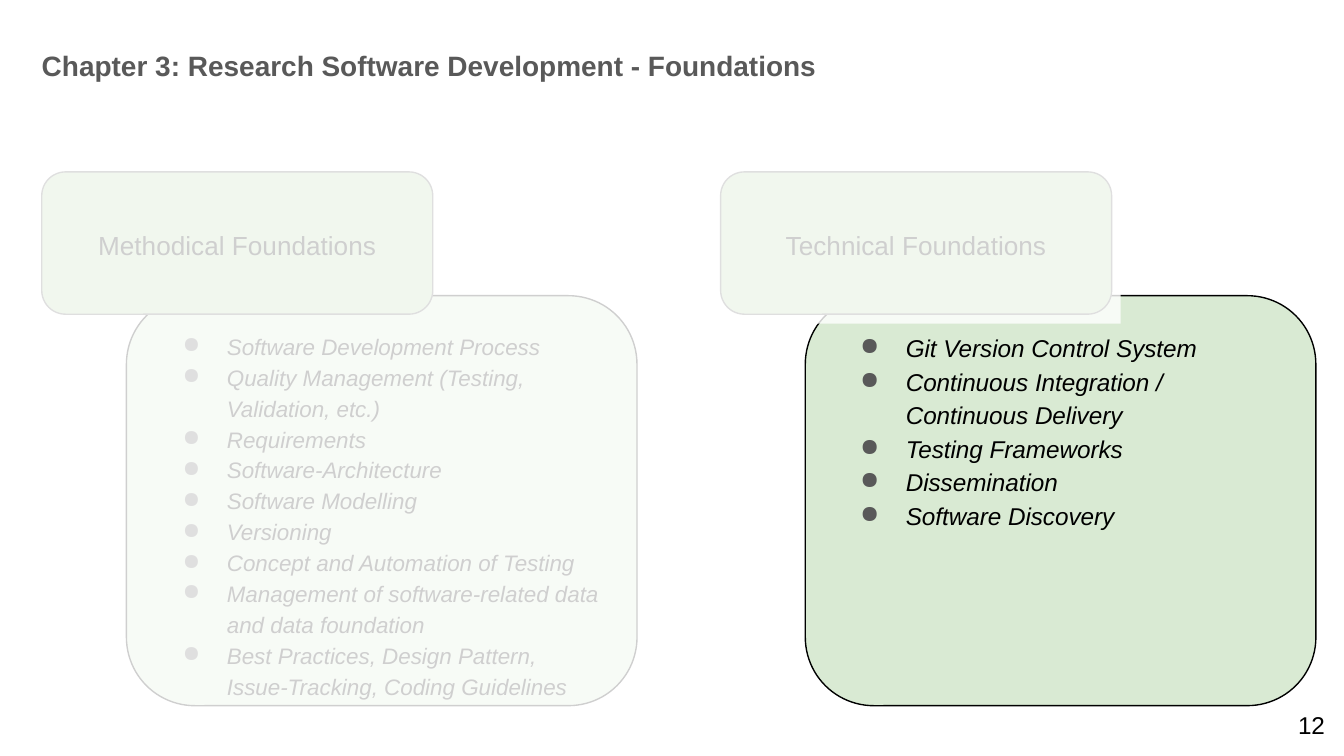
from lxml.etree import SubElement
from pptx import Presentation
from pptx.dml.color import RGBColor
from pptx.enum.shapes import MSO_SHAPE
from pptx.enum.text import MSO_ANCHOR, PP_ALIGN
from pptx.oxml.ns import qn
from pptx.util import Cm, Pt

BLACK = RGBColor(0x00, 0x00, 0x00)
WHITE = RGBColor(0xFF, 0xFF, 0xFF)
GREY = RGBColor(0x59, 0x59, 0x59)
GREEN = RGBColor(0xB6, 0xD7, 0xA8)
PALE_GREEN = RGBColor(0xD9, 0xEA, 0xD3)

COLUMN_STEP = 12.83
COLUMNS = [
    ("Methodical Foundations", 12, 0.33, [
        "Software Development Process",
        "Quality Management (Testing, Validation, etc.)",
        "Requirements",
        "Software-Architecture",
        "Software Modelling",
        "Versioning",
        "Concept and Automation of Testing",
        "Management of software-related data and data foundation",
        "Best Practices, Design Pattern, Issue-Tracking, Coding Guidelines",
    ]),
    ("Technical Foundations", 13, 0.34, [
        "Git Version Control System",
        "Continuous Integration / Continuous Delivery",
        "Testing Frameworks",
        "Dissemination",
        "Software Discovery",
    ]),
]


class SlideBuilder:
    """Holds the style and the current slide, and adds each kind of element."""

    font_name = "Arial"
    inset = 0.25
    corner = 0.167

    def __init__(self, slide):
        self.slide = slide

    def set_text(self, shape, lines, font, color, paragraph_format, anchor, inset):
        frame = shape.text_frame
        frame_format = {"word_wrap": True, "vertical_anchor": anchor}
        for side in ("left", "top", "right", "bottom"):
            frame_format[f"margin_{side}"] = Cm(inset)
        for name, value in frame_format.items():
            setattr(frame, name, value)
        for index, line in enumerate(lines):
            paragraph = frame.add_paragraph() if index else frame.paragraphs[0]
            for name, value in paragraph_format.items():
                setattr(paragraph, name, value)
            run = paragraph.add_run()
            run.text = line
            for name, value in {"name": self.font_name, **font}.items():
                setattr(run.font, name, value)
            run.font.color.rgb = color
        return frame

    def text(self, box, line, font, color, paragraph_format, anchor, inset):
        shape = self.slide.shapes.add_textbox(*map(Cm, box))
        self.set_text(shape, [line], font, color, paragraph_format, anchor, inset)

    def block(self, kind, box, fill):
        shape = self.slide.shapes.add_shape(kind, *map(Cm, box))
        shape.shadow.inherit = False
        shape.fill.solid()
        shape.fill.fore_color.rgb = fill
        return shape

    def card(self, box, fill, line_color):
        shape = self.block(MSO_SHAPE.ROUNDED_RECTANGLE, box, fill)
        shape.adjustments[0] = self.corner
        shape.line.color.rgb = line_color
        shape.line.width = Pt(0.75)
        return shape

    def heading(self, box, line):
        shape = self.card(box, GREEN, GREY)
        self.set_text(shape, [line], {"size": Pt(14)}, BLACK,
                      {"alignment": PP_ALIGN.CENTER, "line_spacing": 1.15},
                      MSO_ANCHOR.MIDDLE, self.inset)

    def bullet_list(self, box, lines, size, hanging):
        shape = self.card(box, PALE_GREEN, BLACK)
        frame = self.set_text(shape, lines, {"size": Pt(size), "italic": True}, BLACK,
                              {"alignment": PP_ALIGN.LEFT, "line_spacing": 1.15},
                              MSO_ANCHOR.TOP, self.inset)
        for paragraph in frame.paragraphs:
            properties = paragraph._p.get_or_add_pPr()
            properties.set("marL", str(Cm(1.27)))
            properties.set("indent", str(-Cm(hanging * 2.54)))
            color = SubElement(properties, qn("a:buClr"))
            SubElement(color, qn("a:srgbClr"), val=str(GREY))
            SubElement(properties, qn("a:buChar"), char="●")

    def veil(self, box):
        shape = self.block(MSO_SHAPE.RECTANGLE, box, WHITE)
        shape.line.fill.background()
        color = shape._element.spPr.find(qn("a:solidFill"))[0]
        SubElement(color, qn("a:alpha"), val="81000")


def main():
    presentation = Presentation()
    presentation.slide_width, presentation.slide_height = Cm(25.4), Cm(14.29)
    slide = presentation.slides.add_slide(presentation.slide_layouts[6])
    builder = SlideBuilder(slide)
    builder.text((0.79, 0.43, 23.93, 1.14),
                 "Chapter 3: Research Software Development - Foundations",
                 {"size": Pt(15), "bold": True}, GREY,
                 {"line_spacing": 0.9}, MSO_ANCHOR.BOTTOM, 0)
    builder.text((23.77, 13.18, 1.52, 1.09), "12", {"size": Pt(13)}, BLACK,
                 {"alignment": PP_ALIGN.RIGHT}, MSO_ANCHOR.TOP, builder.inset)
    for index, (title, size, hanging, topics) in enumerate(COLUMNS):
        left = 0.79 + index * COLUMN_STEP
        builder.bullet_list((left + 1.6, 5.59, 9.65, 7.75), topics, size, hanging)
        builder.heading((left, 3.25, 7.39, 2.69), title)
    builder.veil((13.46, 3.15, 7.72, 2.97))
    builder.veil((0.58, 3.02, 11.91, 10.74))
    presentation.save("out.pptx")


if __name__ == "__main__":
    main()
